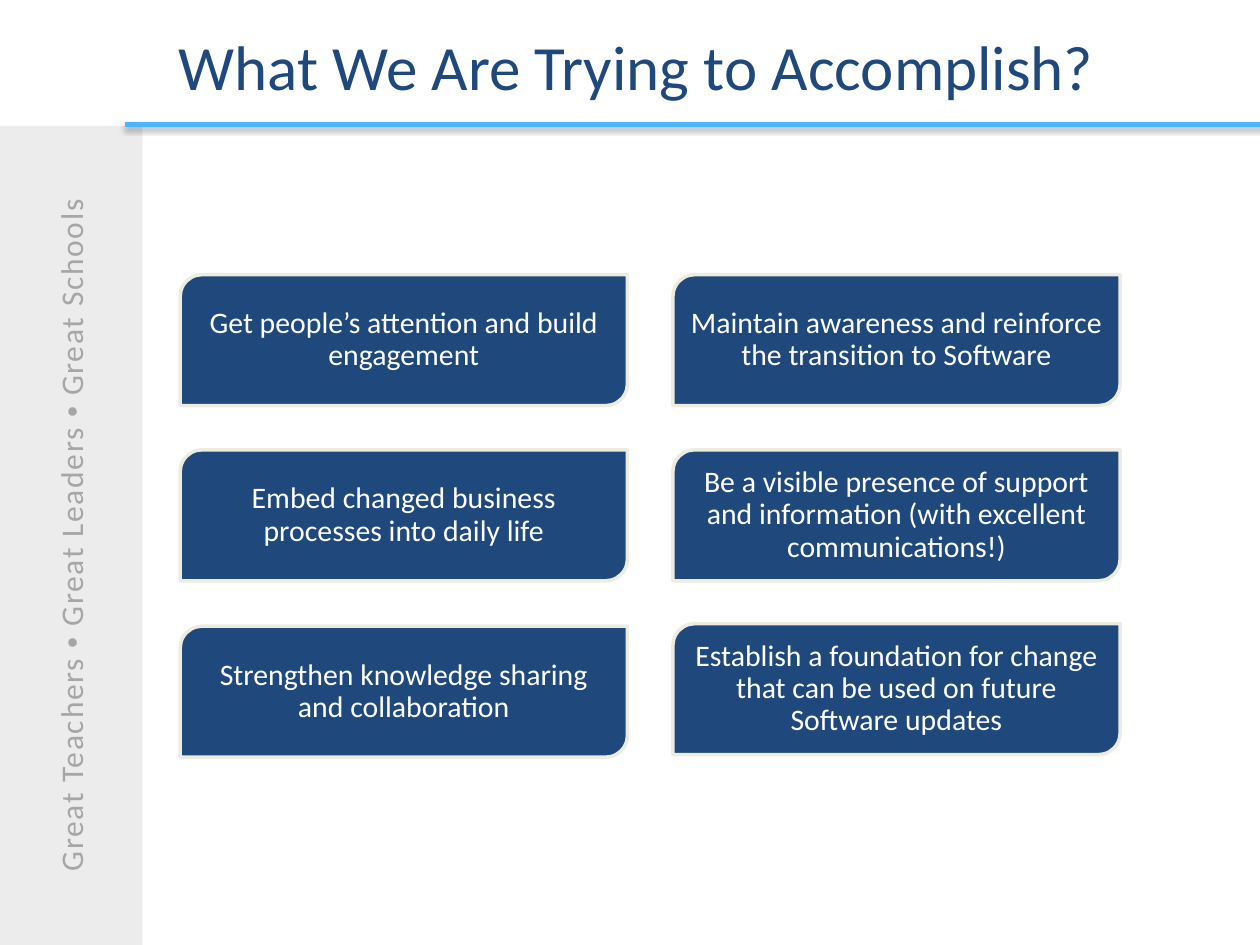
from lxml import etree
from pptx import Presentation
from pptx.dml.color import RGBColor
from pptx.enum.shapes import MSO_CONNECTOR, MSO_SHAPE
from pptx.enum.text import MSO_ANCHOR, PP_ALIGN
from pptx.oxml import parse_xml
from pptx.oxml.ns import nsdecls, qn
from pptx.util import Inches, Pt

COLORS = {
    "navy": "1F497D",
    "cream": "EEECE1",
    "white": "FFFFFF",
    "band": "D9D9D9",
    "grey": "A6A6A6",
    "sky": "49B4FF",
}
FONT = "Calibri"
LEFT, RIGHT = 1.43, 5.34
CARDS = [
    (LEFT, 2.18, "Get people’s attention and build engagement"),
    (RIGHT, 2.18, "Maintain awareness and reinforce the transition to Software"),
    (LEFT, 3.57, "Embed changed business processes into daily life"),
    (RIGHT, 3.57, "Be a visible presence of support and information "
                  "(with excellent communications!)"),
    (LEFT, 4.97, "Strengthen knowledge sharing and collaboration"),
    (RIGHT, 4.95, "Establish a foundation for change that can be used "
                  "on future Software updates"),
]
MOTTO = ["Great Teachers ", "•", " Great Leaders ", "•", " Great Schools"]


def tint(name):
    """Return the named colour."""
    return RGBColor.from_string(COLORS[name])


def style(font, size, color):
    """Set the face, size and colour of a font."""
    font.name = FONT
    font.size = Pt(size)
    font.color.rgb = tint(color)


def add_block(slide, kind, box, fill):
    """Add a filled preset shape with no outline or shadow."""
    shape = slide.shapes.add_shape(kind, *map(Inches, box))
    shape.shadow.inherit = False
    shape.fill.solid()
    shape.fill.fore_color.rgb = tint(fill)
    shape.line.fill.background()
    shape.text_frame.word_wrap = True
    shape.text_frame.vertical_anchor = MSO_ANCHOR.MIDDLE
    return shape


def add_band(slide):
    """Add the pale side band with its upright motto."""
    band = add_block(slide, MSO_SHAPE.RECTANGLE, (-0.01, 1, 1.14, 6.5), "band")
    color = band.fill._xPr.find(".//" + qn("a:srgbClr"))
    etree.SubElement(color, qn("a:alpha"), val="49000")
    band.text_frame._txBody.bodyPr.set("vert", "vert270")
    para = band.text_frame.paragraphs[0]
    para.alignment = PP_ALIGN.CENTER
    style(para.font, 18, "grey")
    for part in MOTTO:
        run = para.add_run()
        run.text = part
        run.font.name = "Arial" if part == "•" else FONT
        run._r.get_or_add_rPr().set("spc", "100")


def add_rule(slide):
    """Add the blue rule with a soft shadow below it."""
    rule = slide.shapes.add_connector(
        MSO_CONNECTOR.STRAIGHT,
        Inches(10.05), Inches(0.99), Inches(0.99), Inches(0.99))
    rule.line.color.rgb = tint("sky")
    rule.line.width = Pt(3)
    rule._element.spPr.append(parse_xml(
        f'<a:effectLst {nsdecls("a")}>'
        f'<a:outerShdw blurRad="{Pt(3.1)}" dist="{Pt(1.8)}" dir="5400000" '
        'rotWithShape="0"><a:srgbClr val="000000"><a:alpha val="35000"/>'
        '</a:srgbClr></a:outerShdw></a:effectLst>'))


def add_card(slide, left, top, text):
    """Add one goal card."""
    card = add_block(slide, MSO_SHAPE.ROUND_2_DIAG_RECTANGLE,
                     (left, top, 3.55, 1.04), "navy")
    card.line.color.rgb = tint("cream")
    card.line.width = Pt(2)
    frame = card.text_frame
    frame.margin_left = frame.margin_right = Inches(0.07)
    frame.margin_top = frame.margin_bottom = Inches(0.07)
    para = frame.paragraphs[0]
    para.text = text
    para.alignment = PP_ALIGN.CENTER
    para.line_spacing = 0.9
    style(para.font, 17, "white")


def add_title(slide, text):
    """Add the slide heading."""
    box = slide.shapes.add_textbox(
        Inches(1.32), Inches(0.04), Inches(7.77), Inches(0.95))
    frame = box.text_frame
    frame.word_wrap = True
    frame.vertical_anchor = MSO_ANCHOR.MIDDLE
    para = frame.paragraphs[0]
    para.text = text
    style(para.font, 36, "navy")


def main():
    """Build and save the slide."""
    deck = Presentation()
    deck.slide_width, deck.slide_height = Inches(10), Inches(7.5)
    slide = deck.slides.add_slide(deck.slide_layouts[6])
    add_band(slide)
    add_rule(slide)
    for card in CARDS:
        add_card(slide, *card)
    add_title(slide, "What We Are Trying to Accomplish?")
    deck.save("out.pptx")


if __name__ == "__main__":
    main()
